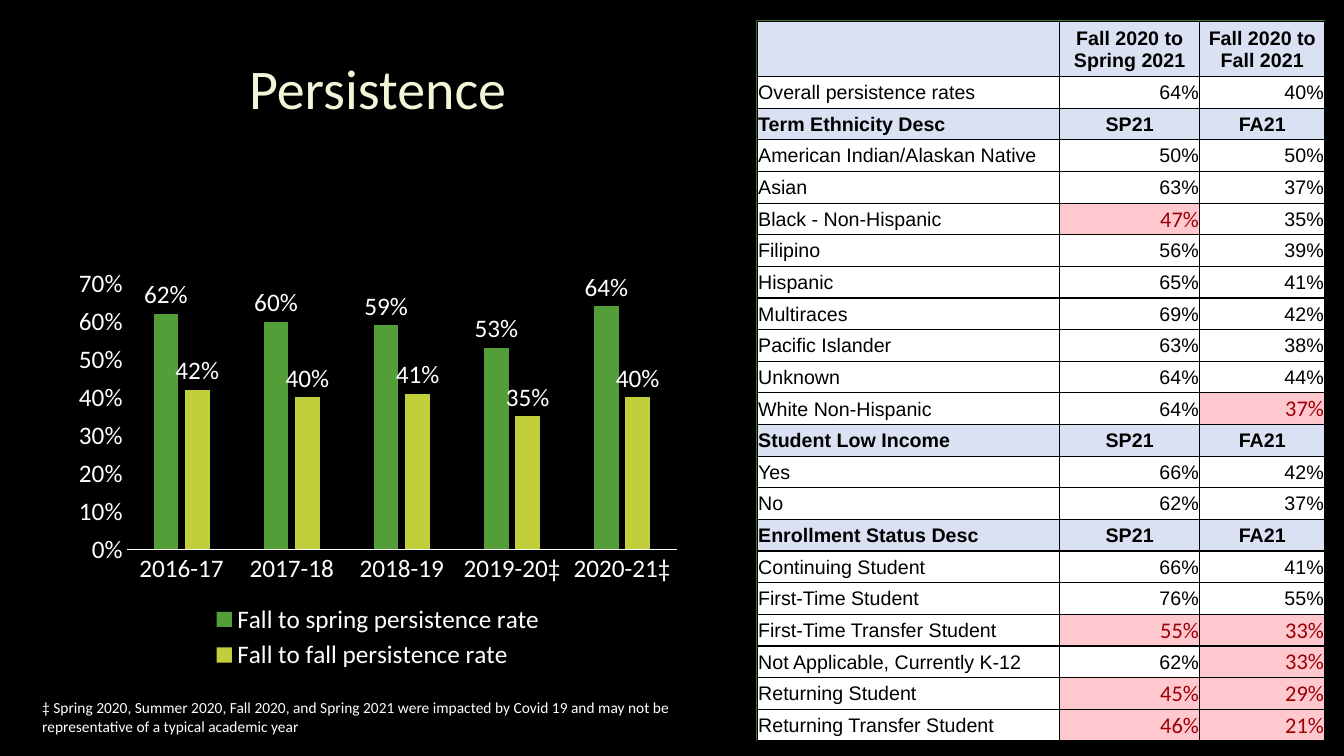
from lxml import etree
from pptx import Presentation
from pptx.chart.data import CategoryChartData
from pptx.dml.color import RGBColor
from pptx.enum.chart import XL_CHART_TYPE as ChartType
from pptx.enum.chart import XL_LABEL_POSITION as LabelPosition
from pptx.enum.chart import XL_LEGEND_POSITION as LegendPosition
from pptx.enum.chart import XL_TICK_MARK as TickMark
from pptx.enum.shapes import MSO_SHAPE as Shape
from pptx.enum.text import MSO_ANCHOR as Anchor
from pptx.enum.text import PP_ALIGN as Align
from pptx.oxml import parse_xml
from pptx.oxml.ns import nsdecls, qn
from pptx.util import Inches, Pt

BLACK = RGBColor(0x00, 0x00, 0x00)
WHITE = RGBColor(0xFF, 0xFF, 0xFF)
CREAM = RGBColor(0xF2, 0xF5, 0xD7)
DARK_GREEN = RGBColor(0x3E, 0x75, 0x2A)
GREEN = RGBColor(0x54, 0x9E, 0x39)
LIME = RGBColor(0xC0, 0xCF, 0x3A)
HEADER_BLUE = RGBColor(0xD9, 0xE1, 0xF2)
ALERT_PINK = RGBColor(0xFF, 0xC7, 0xCE)
ALERT_RED = RGBColor(0x9C, 0x00, 0x06)

LIGHT_FONT = {"name": "Calibri", "size": Pt(18), "color": WHITE}
BODY_FONT = {"name": "Arial", "size": Pt(14), "color": BLACK, "bold": False}
HEADER_FONT = {**BODY_FONT, "bold": True}
ALERT_FONT = {"name": "Calibri", "size": Pt(16), "color": ALERT_RED, "bold": False}


def set_font(font, values):
    for name, value in values.items():
        if name == "color":
            font.color.rgb = value
        else:
            setattr(font, name, value)


def set_borders(cell):
    properties = cell._tc.get_or_add_tcPr()
    for position, side in enumerate(("lnL", "lnR", "lnT", "lnB")):
        border = parse_xml(
            f'<a:{side} {nsdecls("a")} w="12700"><a:solidFill>'
            f'<a:srgbClr val="{BLACK}"/></a:solidFill></a:{side}>')
        properties.insert(position, border)


presentation = Presentation()
presentation.slide_width = Inches(13.33)
presentation.slide_height = Inches(7.5)
slide = presentation.slides.add_slide(presentation.slide_layouts[5])
slide.background.fill.solid()
slide.background.fill.fore_color.rgb = BLACK

# White panel behind the table
table_area = (Inches(7.51), Inches(0.21), Inches(5.63), Inches(7.14))
panel = slide.shapes.add_shape(Shape.RECTANGLE, *table_area)
panel.shadow.inherit = False
panel.fill.solid()
panel.fill.fore_color.rgb = WHITE
panel.line.color.rgb = DARK_GREEN
panel.line.width = Pt(1)

# Title with a faint outline
title = slide.shapes.title
title.left, title.top = Inches(0.2), Inches(0.33)
title.width, title.height = Inches(7.09), Inches(1.06)
title.text_frame.text = "Persistence"
title.text_frame.vertical_anchor = Anchor.MIDDLE
title_paragraph = title.text_frame.paragraphs[0]
title_paragraph.alignment = Align.CENTER
title_run = title_paragraph.runs[0]
set_font(title_run.font, {"name": "Calibri", "size": Pt(40), "color": CREAM})
title_run.font._element.insert(0, parse_xml(
    f'<a:ln {nsdecls("a")} w="9525"><a:solidFill><a:srgbClr val="404040">'
    '<a:alpha val="10000"/></a:srgbClr></a:solidFill></a:ln>'))

# Persistence table: label, spring rate, fall rate
rows = [
    ("", "Fall 2020 to Spring 2021", "Fall 2020 to Fall 2021"),
    ("Overall persistence rates", 64, 40),
    ("Term Ethnicity Desc", "SP21", "FA21"),
    ("American Indian/Alaskan Native", 50, 50),
    ("Asian", 63, 37),
    ("Black - Non-Hispanic", 47, 35),
    ("Filipino", 56, 39),
    ("Hispanic", 65, 41),
    ("Multiraces", 69, 42),
    ("Pacific Islander", 63, 38),
    ("Unknown", 64, 44),
    ("White Non-Hispanic", 64, 37),
    ("Student Low Income", "SP21", "FA21"),
    ("Yes", 66, 42),
    ("No", 62, 37),
    ("Enrollment Status Desc", "SP21", "FA21"),
    ("Continuing Student", 66, 41),
    ("First-Time Student", 76, 55),
    ("First-Time Transfer Student", 55, 33),
    ("Not Applicable, Currently K-12", 62, 33),
    ("Returning Student", 45, 29),
    ("Returning Transfer Student", 46, 21),
]
alerts = {
    ("Black - Non-Hispanic", 1), ("White Non-Hispanic", 2),
    ("First-Time Transfer Student", 1), ("First-Time Transfer Student", 2),
    ("Not Applicable, Currently K-12", 2),
    ("Returning Student", 1), ("Returning Student", 2),
    ("Returning Transfer Student", 1), ("Returning Transfer Student", 2),
}
table = slide.shapes.add_table(len(rows), 3, *table_area).table
for column, width in zip(table.columns, (3, 1.39, 1.24)):
    column.width = Inches(width)
header_height = Inches(0.55)
row_height = (table_area[3] - header_height) // (len(rows) - 1)

for row_index, row in enumerate(rows):
    table.rows[row_index].height = row_height if row_index else header_height
    is_header = isinstance(row[1], str)
    for column_index, value in enumerate(row):
        cell = table.cell(row_index, column_index)
        is_alert = (row[0], column_index) in alerts
        cell.vertical_anchor = Anchor.MIDDLE
        cell.margin_left = cell.margin_right = cell.margin_top = Inches(0.01)
        cell.margin_bottom = 0
        if is_header or is_alert:
            cell.fill.solid()
            cell.fill.fore_color.rgb = HEADER_BLUE if is_header else ALERT_PINK
        else:
            cell.fill.background()
        set_borders(cell)

        paragraph = cell.text_frame.paragraphs[0]
        if column_index:
            paragraph.alignment = Align.CENTER if is_header else Align.RIGHT
        font = HEADER_FONT if is_header else ALERT_FONT if is_alert else BODY_FONT
        set_font(paragraph.font, font)
        if value:
            run = paragraph.add_run()
            run.text = value if isinstance(value, str) else f"{value}%"
            set_font(run.font, font)

# Persistence chart
chart_data = CategoryChartData(number_format="0%")
chart_data.categories = ["2016-17", "2017-18", "2018-19", "2019-20‡", "2020-21‡"]
chart_data.add_series("Fall to spring persistence rate", (0.62, 0.6, 0.59, 0.53, 0.64))
chart_data.add_series("Fall to fall persistence rate", (0.42, 0.4, 0.41, 0.35, 0.4))
chart = slide.shapes.add_chart(
    ChartType.COLUMN_CLUSTERED, Inches(0.66), Inches(2.58),
    Inches(6.18), Inches(4.12), chart_data).chart
set_font(chart.font, LIGHT_FONT)
chart.has_title = False
chart.has_legend = True
chart.legend.position = LegendPosition.BOTTOM
chart.legend.include_in_layout = False
set_font(chart.legend.font, LIGHT_FONT)

for axis in (chart.category_axis, chart.value_axis):
    axis.major_tick_mark = axis.minor_tick_mark = TickMark.NONE
    axis.has_major_gridlines = False
    set_font(axis.tick_labels.font, LIGHT_FONT)
chart.category_axis.format.line.color.rgb = WHITE
chart.category_axis.format.line.width = Pt(0.75)
value_axis = chart.value_axis
value_axis.format.line.fill.background()
value_axis.minimum_scale, value_axis.maximum_scale = 0, 0.7
value_axis.major_unit = 0.1
value_axis.tick_labels.number_format = "0%"
value_axis.tick_labels.number_format_is_linked = False

plot = chart.plots[0]
plot.gap_width, plot.overlap = 219, -27
plot.vary_by_categories = False
for series, color in zip(plot.series, (GREEN, LIME)):
    series.format.fill.solid()
    series.format.fill.fore_color.rgb = color
    labels = series.data_labels
    labels.show_value = True
    labels.position = LabelPosition.OUTSIDE_END
    labels.number_format = "0%"
    labels.number_format_is_linked = False
    set_font(labels.font, LIGHT_FONT)

# Footnote
footnote = slide.shapes.add_textbox(
    Inches(0.32), Inches(6.88), Inches(6.67), Inches(0.47)).text_frame
footnote.word_wrap = True
footnote_run = footnote.paragraphs[0].add_run()
footnote_run.text = (
    "‡ Spring 2020, Summer 2020, Fall 2020, and Spring 2021 were impacted by "
    "Covid 19 and may not be representative of a typical academic year")
set_font(footnote_run.font, {**LIGHT_FONT, "size": Pt(11)})

presentation.save("out.pptx")
